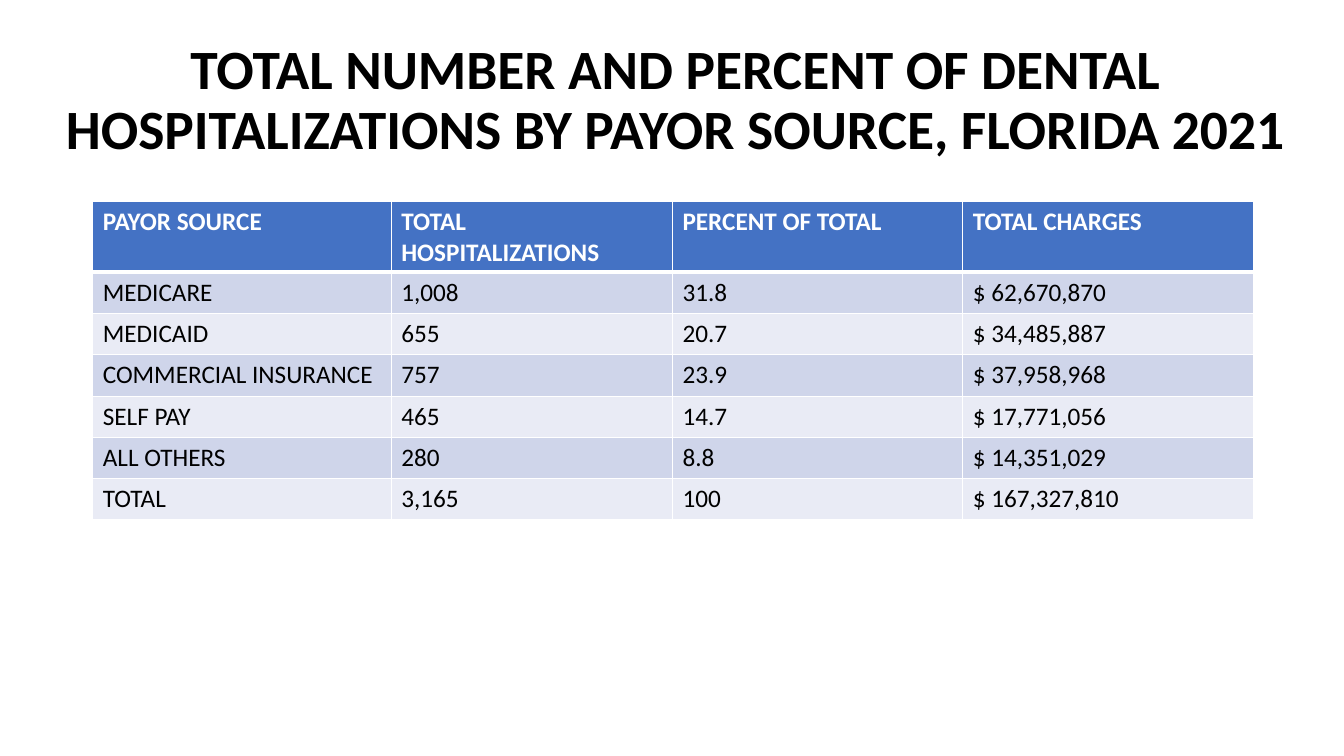
from dataclasses import dataclass

from lxml import etree
from pptx import Presentation
from pptx.dml.color import RGBColor
from pptx.enum.text import MSO_ANCHOR, PP_ALIGN
from pptx.oxml.ns import qn
from pptx.util import Inches, Pt

LEFT, CENTER = PP_ALIGN.LEFT, PP_ALIGN.CENTER
TOP, MIDDLE = MSO_ANCHOR.TOP, MSO_ANCHOR.MIDDLE

TITLE = "TOTAL NUMBER AND PERCENT OF DENTAL HOSPITALIZATIONS BY PAYOR SOURCE, FLORIDA 2021"
PAYOR_ROWS = [
    ("PAYOR SOURCE", "TOTAL HOSPITALIZATIONS", "PERCENT OF TOTAL", "TOTAL CHARGES"),
    ("MEDICARE", "1,008", "31.8", "$ 62,670,870"),
    ("MEDICAID", "655", "20.7", "$ 34,485,887"),
    ("COMMERCIAL INSURANCE", "757", "23.9", "$ 37,958,968"),
    ("SELF PAY", "465", "14.7", "$ 17,771,056"),
    ("ALL OTHERS", "280", "8.8", "$ 14,351,029"),
    ("TOTAL", "3,165", "100", "$ 167,327,810"),
]
COLUMN_WIDTHS = (2.96, 2.79, 2.88, 2.88)
ROW_HEIGHT = 0.41
TITLE_AREA = (0.5, 0.16, 12.4, 1.69)
TABLE_AREA = (0.92, 2, 11.5, 3.13)


@dataclass(frozen=True)
class Theme:
    font: str = "Calibri"
    title_size: float = 39.6
    table_size: float = 18
    text: str = "000000"
    white: str = "FFFFFF"
    header: str = "4472C4"
    bands: tuple = ("E9EBF5", "CFD5EA")
    border: float = 1
    header_border: float = 3


THEME = Theme()


def write_text(frame, text, size, color=THEME.text, bold=False, align=LEFT, spacing=1.0):
    frame.word_wrap = True
    para = frame.paragraphs[0]
    para.alignment = align
    para.line_spacing = spacing
    span = para.add_run()
    span.text = text
    span.font.name = THEME.font
    span.font.size = Pt(size)
    span.font.bold = bold
    span.font.color.rgb = RGBColor.from_string(color)


def set_borders(cell, **widths):
    properties = cell._tc.get_or_add_tcPr()
    for position, side in enumerate("LRTB"):
        width = widths.get(side, THEME.border)
        line = etree.Element(qn(f"a:ln{side}"), w=str(Pt(width)))
        fill = etree.SubElement(line, qn("a:solidFill"))
        etree.SubElement(fill, qn("a:srgbClr"), val=THEME.white)
        properties.insert(position, line)


def add_title(page):
    box = page.shapes.add_textbox(*map(Inches, TITLE_AREA))
    box.text_frame.vertical_anchor = MIDDLE
    write_text(box.text_frame, TITLE, THEME.title_size, bold=True, align=CENTER, spacing=0.9)


def add_payor_table(page):
    area = [Inches(length) for length in TABLE_AREA]
    table_frame = page.shapes.add_table(len(PAYOR_ROWS), len(COLUMN_WIDTHS), *area)
    table = table_frame.table
    for column, width in zip(table.columns, COLUMN_WIDTHS):
        column.width = Inches(width)
    for row_index, values in enumerate(PAYOR_ROWS):
        table.rows[row_index].height = Inches(ROW_HEIGHT)
        is_header = row_index == 0
        fill = THEME.header if is_header else THEME.bands[row_index % 2]
        color = THEME.white if is_header else THEME.text
        edges = {0: {"B": THEME.header_border}, 1: {"T": THEME.header_border}}.get(row_index, {})
        for column_index, value in enumerate(values):
            cell = table.cell(row_index, column_index)
            cell.vertical_anchor = TOP
            cell.fill.solid()
            cell.fill.fore_color.rgb = RGBColor.from_string(fill)
            set_borders(cell, **edges)
            write_text(cell.text_frame, value, THEME.table_size, color=color, bold=is_header)
    table_frame.height = area[3]


def main():
    deck = Presentation()
    deck.slide_width, deck.slide_height = Inches(13.33), Inches(7.5)
    page = deck.slides.add_slide(deck.slide_layouts[6])
    add_title(page)
    add_payor_table(page)
    deck.save("out.pptx")


if __name__ == "__main__":
    main()
